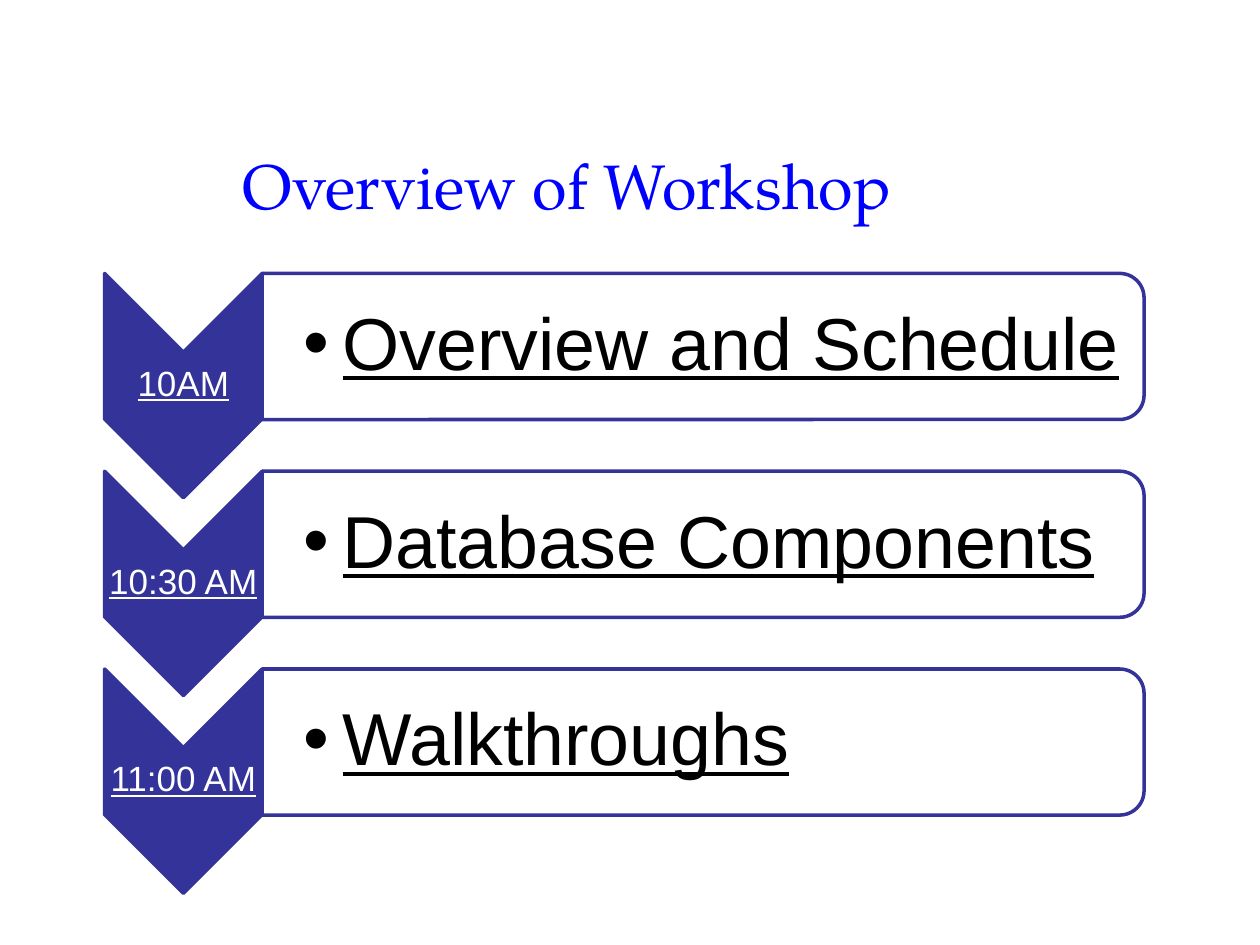
from lxml import etree
from pptx import Presentation
from pptx.dml.color import RGBColor
from pptx.enum.shapes import MSO_SHAPE
from pptx.enum.text import MSO_ANCHOR, PP_ALIGN
from pptx.oxml.ns import qn
from pptx.util import Inches, Pt

TITLE = "Overview of Workshop"
SESSIONS = [
    ("10AM", "Overview and Schedule"),
    ("10:30 AM", "Database Components"),
    ("11:00 AM", "Walkthroughs"),
]
COLORS = {"title": "0000FF", "accent": "333399", "panel": "FFFFFF",
          "time": "FFFFFF", "topic": "000000"}
FIRST_TOP, PITCH = 2.17, 1.57
LEFT, CHEVRON_WIDTH, CHEVRON_HEIGHT = 0.83, 1.25, 1.78
PANEL_WIDTH, PANEL_HEIGHT = 7, 1.16


def add_turned_shape(slide, kind, left, top, width, height, fill):
    shape = slide.shapes.add_shape(
        kind, Inches(left + (width - height) / 2),
        Inches(top + (height - width) / 2), Inches(height), Inches(width))
    shape.rotation = 90
    shape.shadow.inherit = False
    shape.fill.solid()
    shape.fill.fore_color.rgb = RGBColor.from_string(COLORS[fill])
    shape.line.color.rgb = RGBColor.from_string(COLORS["accent"])
    shape.line.width = Pt(2)
    return shape


def add_text(slide, text, box, size, color, font="Arial", underline=True,
             insets=(0.1, 0.05, 0.1, 0.05), align=PP_ALIGN.CENTER,
             spacing=0.9, bullet=False):
    frame = slide.shapes.add_textbox(*map(Inches, box)).text_frame
    frame.word_wrap = True
    frame.vertical_anchor = MSO_ANCHOR.MIDDLE
    (frame.margin_left, frame.margin_top,
     frame.margin_right, frame.margin_bottom) = map(Inches, insets)
    paragraph = frame.paragraphs[0]
    paragraph.text = text
    paragraph.alignment = align
    paragraph.line_spacing = spacing
    if bullet:
        properties = paragraph._p.get_or_add_pPr()
        properties.set("marL", str(Inches(0.31)))
        properties.set("indent", str(-Inches(0.31)))
        etree.SubElement(properties, qn("a:buFont")).set("typeface", "Arial")
        etree.SubElement(properties, qn("a:buChar")).set("char", "•")
    paragraph.font.name = font
    paragraph.font.size = Pt(size)
    paragraph.font.underline = underline
    paragraph.font.color.rgb = RGBColor.from_string(COLORS[color])


def add_session(slide, top, time, topic):
    panel_left = LEFT + CHEVRON_WIDTH
    add_turned_shape(slide, MSO_SHAPE.CHEVRON, LEFT, top,
                     CHEVRON_WIDTH, CHEVRON_HEIGHT, "accent")
    add_text(slide, time, (LEFT, top + 0.62, CHEVRON_WIDTH, 0.53), 20, "time",
             insets=(0.01,) * 4)
    panel = add_turned_shape(slide, MSO_SHAPE.ROUND_2_SAME_RECTANGLE,
                             panel_left, top, PANEL_WIDTH, PANEL_HEIGHT, "panel")
    panel_color = panel.fill._xPr.find(qn("a:solidFill"))[0]
    etree.SubElement(panel_color, qn("a:alpha")).set("val", "90000")
    add_text(slide, topic, (panel_left, top + 0.06, 6.95, 1.04), 42, "topic",
             insets=(0.33, 0.03, 0.03, 0.03), align=PP_ALIGN.LEFT, bullet=True)


def main():
    presentation = Presentation()
    presentation.slide_width, presentation.slide_height = Inches(10), Inches(7.5)
    slide = presentation.slides.add_slide(presentation.slide_layouts[6])
    add_text(slide, TITLE, (0.5, 0.92, 8, 1.08), 36, "title",
             font="TeX Gyre Pagella", underline=False, spacing=1.0)
    for row, (time, topic) in enumerate(SESSIONS):
        add_session(slide, FIRST_TOP + row * PITCH, time, topic)
    presentation.save("out.pptx")


if __name__ == "__main__":
    main()
